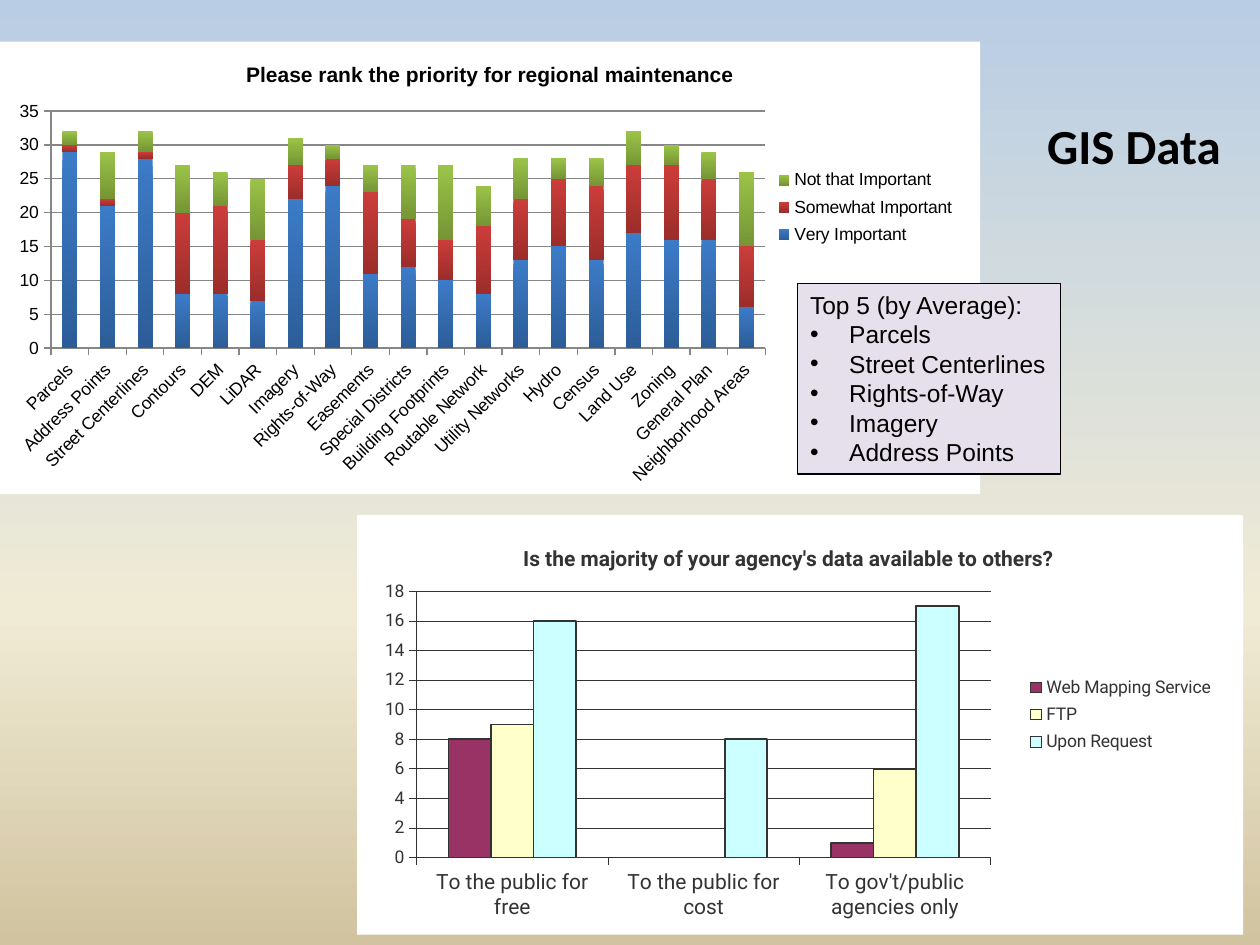
from copy import deepcopy

from lxml import etree
from pptx import Presentation
from pptx import util as u
from pptx.chart import data as chart_data
from pptx.dml.color import RGBColor
from pptx.enum import chart as ch, shapes, text
from pptx.oxml import parse_xml
from pptx.oxml.ns import nsdecls, qn

COLORS = {
    "black": "000000", "white": "FFFFFF", "ink": "333333", "grid": "868686",
    "sky": "B9CDE5", "cream": "F0EBD5", "sand": "D1C39F", "lilac": "E6E0EC",
    "blue": "3C7BC7", "blue_dark": "2C5D98", "red": "CB3D3A", "red_dark": "9B2D2A",
    "green": "9BC348", "green_dark": "769535",
    "plum": "993366", "lemon": "FFFFCC", "aqua": "CCFFFF",
}


def rgb(name):
    return RGBColor.from_string(COLORS[name])


class SlideBuilder:
    """Holds the style and the current slide."""

    def __init__(self, slide):
        self.slide = slide

    def style(self, font, face, size, color, bold=False):
        font.name, font.size, font.bold = face, u.Pt(size), bold
        font.color.rgb = rgb(color)

    def outline(self, line, color, width):
        line.color.rgb = rgb(color)
        line.width = u.Pt(width)

    def background(self, stops):
        fill = self.slide.background.fill
        fill.gradient()
        fill.gradient_angle = 270
        stop_list = self.slide.element.find(".//" + qn("a:gsLst"))
        while len(stop_list) < len(stops):
            stop_list.append(deepcopy(stop_list[-1]))
        for stop, (position, color) in zip(fill.gradient_stops, stops):
            stop.position = position
            stop.color.rgb = rgb(color)

    def title(self, at, words):
        box = self.slide.shapes.add_textbox(*map(u.Cm, at))
        frame = box.text_frame
        frame.word_wrap = True
        frame.vertical_anchor = text.MSO_ANCHOR.MIDDLE
        frame.text = words
        para = frame.paragraphs[0]
        para.alignment = text.PP_ALIGN.CENTER
        para.line_spacing = 0.95
        self.style(para.runs[0].font, "Calibri", 28, "black", bold=True)

    def list_box(self, at, heading, items):
        box = self.slide.shapes.add_shape(shapes.MSO_SHAPE.RECTANGLE, *map(u.Cm, at))
        box.shadow.inherit = False
        box.fill.solid()
        box.fill.fore_color.rgb = rgb("lilac")
        self.outline(box.line, "black", 0.75)
        frame = box.text_frame
        frame.text = "\n".join([heading, *items])
        frame.word_wrap = False
        frame.auto_size = text.MSO_AUTO_SIZE.SHAPE_TO_FIT_TEXT
        frame.vertical_anchor = text.MSO_ANCHOR.TOP
        for index, para in enumerate(frame.paragraphs):
            para.alignment = text.PP_ALIGN.LEFT
            self.style(para.runs[0].font, "Arial", 14, "black")
            if index:
                props = para._p.get_or_add_pPr()
                props.set("marL", str(u.Cm(0.79)))
                props.set("indent", str(-u.Cm(0.79)))
                etree.SubElement(props, qn("a:buFont")).set("typeface", "Arial")
                etree.SubElement(props, qn("a:buChar")).set("char", "•")

    def chart(self, at, kind, title, categories, series, face, color, top, step,
              line, plot_at, legend_at, title_at=None, category_size=10):
        table = chart_data.CategoryChartData()
        table.categories = categories
        for name, values, _ in series:
            table.add_series(name, values)
        chart = self.slide.shapes.add_chart(kind, *map(u.Cm, at), table).chart
        self.style(chart.font, face, 10, color)
        chart.element.find(qn("c:txPr")).addprevious(parse_xml(
            f'<c:spPr {nsdecls("c", "a")}><a:solidFill><a:srgbClr val="{COLORS["white"]}"/>'
            '</a:solidFill><a:ln><a:noFill/></a:ln></c:spPr>'))

        # Title and legend
        chart.has_title = True
        chart.chart_title.text_frame.text = title
        heading = chart.chart_title.text_frame.paragraphs[0].runs[0]
        self.style(heading.font, face, 12, color, bold=True)
        chart.chart_title.include_in_layout = False
        chart.has_legend = True
        chart.legend.position = ch.XL_LEGEND_POSITION.RIGHT
        chart.legend.include_in_layout = False
        self.style(chart.legend.font, face, 10, color)

        # Axes
        sizes = ((chart.category_axis, category_size), (chart.value_axis, 10))
        for axis, size in sizes:
            axis.major_tick_mark = ch.XL_TICK_MARK.OUTSIDE
            axis.minor_tick_mark = ch.XL_TICK_MARK.NONE
            self.style(axis.tick_labels.font, face, size, color)
            self.outline(axis.format.line, *line)
        values_axis = chart.value_axis
        values_axis.minimum_scale, values_axis.maximum_scale = 0, top
        values_axis.major_unit = step
        values_axis.has_major_gridlines = True
        self.outline(values_axis.major_gridlines.format.line, *line)

        # Bars: one colour is a flat, outlined bar; two make a gradient
        plot = chart.plots[0]
        plot.vary_by_categories = False
        plot.gap_width = 150
        for bars, (_, _, shades) in zip(plot.series, series):
            bars.invert_if_negative = False
            fill = bars.format.fill
            if len(shades) == 1:
                fill.solid()
                fill.fore_color.rgb = rgb(shades[0])
                self.outline(bars.format.line, "ink", 1)
            else:
                fill.gradient()
                fill.gradient_angle = 270
                for stop, shade, position in zip(fill.gradient_stops, shades, (0, 1)):
                    stop.color.rgb = rgb(shade)
                    stop.position = position

        # Fixed places inside the chart
        size = at[2:]
        plot_area = chart.element.find(".//" + qn("c:plotArea"))
        self.place(plot_area, 0, plot_at, size, [("layoutTarget", "inner")])
        self.place(chart.legend._element, 1, legend_at, size)
        if title_at:
            self.place(chart.chart_title._element, 1, title_at, size)
        return chart

    def place(self, part, index, at, size, settings=()):
        """Place a chart part; at and size are in centimetres."""
        for old in part.findall(qn("c:layout")):
            part.remove(old)
        layout = parse_xml(f'<c:layout {nsdecls("c")}><c:manualLayout/></c:layout>')
        shares = [length / whole for length, whole in zip(at, size * 2)]
        for tag, value in [*settings, ("xMode", "edge"), ("yMode", "edge"),
                           *zip("xywh", shares)]:
            etree.SubElement(layout[0], qn("c:" + tag)).set("val", str(value))
        part.insert(index, layout)


def main():
    deck = Presentation()
    deck.slide_width, deck.slide_height = u.Cm(25.4), u.Cm(19.05)
    page = SlideBuilder(deck.slides.add_slide(deck.slide_layouts[6]))
    page.background([(0, "sky"), (0.65, "cream"), (1, "sand")])
    page.title((20.32, 2.11, 5.08, 1.73), "GIS Data")

    # Priority ranking
    layers = ["Parcels", "Address Points", "Street Centerlines", "Contours", "DEM",
              "LiDAR", "Imagery", "Rights-of-Way", "Easements", "Special Districts",
              "Building Footprints", "Routable Network", "Utility Networks", "Hydro",
              "Census", "Land Use", "Zoning", "General Plan", "Neighborhood Areas"]
    very = [29, 21, 28, 8, 8, 7, 22, 24, 11, 12, 10, 8, 13, 15, 13, 17, 16, 16, 6]
    somewhat = [1, 1, 1, 12, 13, 9, 5, 4, 12, 7, 6, 10, 9, 10, 11, 10, 11, 9, 9]
    not_that = [2, 7, 3, 7, 5, 9, 4, 2, 4, 8, 11, 6, 6, 3, 4, 5, 3, 4, 11]
    ranking = page.chart(
        (0, 0.84, 19.76, 9.12), ch.XL_CHART_TYPE.COLUMN_STACKED,
        "Please rank the priority for regional maintenance", layers,
        [("Very Important", very, ("blue", "blue_dark")),
         ("Somewhat Important", somewhat, ("red", "red_dark")),
         ("Not that Important", not_that, ("green", "green_dark"))],
        "Arial", "black", 35, 5, ("grid", 0.75),
        (1.03, 1.4, 14.4, 4.78), (15.6, 2.44, 3.7, 1.8))
    ranking.plots[0].overlap = 100
    label_body = ranking.category_axis._element.find(f"{qn('c:txPr')}/{qn('a:bodyPr')}")
    label_body.set("rot", str(-45 * 60000))

    # Top five
    page.list_box((16.08, 5.72, 5.3, 3.84), "Top 5 (by Average):",
                  ["Parcels", "Street Centerlines", "Rights-of-Way", "Imagery",
                   "Address Points"])

    # Data availability
    page.chart(
        (7.2, 10.38, 17.86, 8.46), ch.XL_CHART_TYPE.COLUMN_CLUSTERED,
        "Is the majority of your agency's data available to others?",
        ["To the public for free", "To the public for cost",
         "To gov't/public agencies only"],
        [("Web Mapping Service", [8, 0, 1], ("plum",)),
         ("FTP", [9, 0, 6], ("lemon",)),
         ("Upon Request", [16, 8, 17], ("aqua",))],
        "Roboto", "ink", 18, 2, ("ink", 0.25),
        (1.2, 1.54, 11.57, 5.37), (13.47, 3.13, 3.85, 1.8), (3.27, 0.52),
        category_size=12)

    deck.save("out.pptx")


if __name__ == "__main__":
    main()
